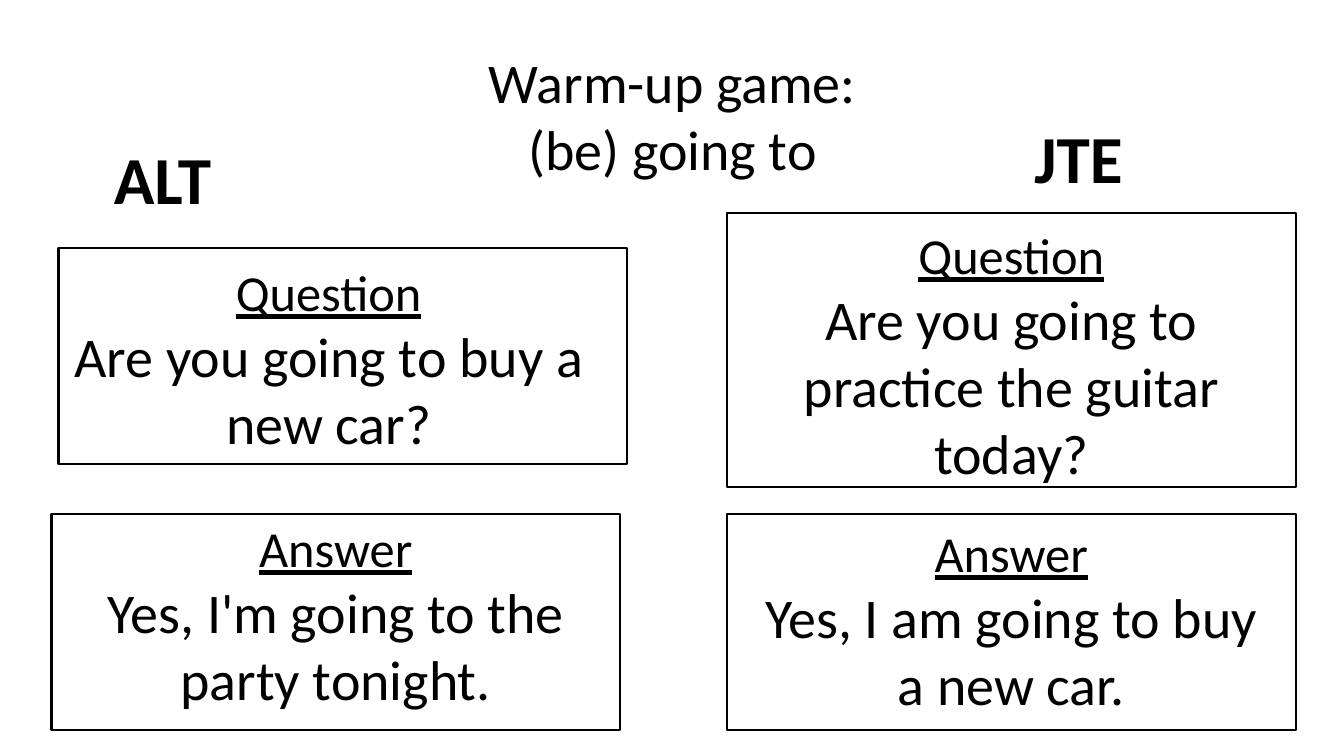
"""Build the warm-up game slide with question and answer cards for ALT and JTE."""
import pptx
import pptx.dml.color
import pptx.enum.shapes
import pptx.enum.text
import pptx.util

CARD_W, TEXT_W = 42.31, 40.21
CARD_H, TEXT_H = 28.53, 27.33
CARDS = [
    {"head": "Question", "line": "Are you going to buy a new car?",
     "frame": (4.35, 32.8, CARD_W, CARD_H), "text": (4.35, 33.87, TEXT_W, TEXT_H)},
    {"head": "Answer", "line": "Yes, I'm going to the party tonight.",
     "frame": (3.83, 68, CARD_W, CARD_H), "text": (4.88, 67.73, TEXT_W, TEXT_H)},
    {"head": "Question", "line": "Are you going to practice the guitar today?",
     "frame": (54.09, 28.13, CARD_W, 36.27), "text": (54.09, 28.93, CARD_W, 36.4)},
    {"head": "Answer", "line": "Yes, I am going to buy a new car.",
     "frame": (54.09, 68, CARD_W, CARD_H), "text": (55.14, 68.4, TEXT_W, TEXT_H)},
]
TITLE = {"lines": ["Warm-up game:", "(be) going to"], "at": (14.55, 5.6, 70.97, 19.33)}
SPEAKERS = [("JTE", (76.22, 14.8, 20.41, 12)), ("ALT", (7.73, 17.6, CARD_W, 12))]

BLACK = pptx.dml.color.RGBColor(0, 0, 0)
CENTER = {"alignment": pptx.enum.text.PP_ALIGN.CENTER}
LABEL = {"alignment": pptx.enum.text.PP_ALIGN.LEFT, "line_spacing": 0.9,
         "space_before": pptx.util.Pt(10)}
BOTTOM = pptx.enum.text.MSO_ANCHOR.BOTTOM
TOP = pptx.enum.text.MSO_ANCHOR.TOP
THEME = {
    "head": {"name": "Calibri", "size": pptx.util.Pt(36), "underline": True},
    "body": {"name": "Calibri", "size": pptx.util.Pt(40)},
    "speaker": {"name": "Calibri", "size": pptx.util.Pt(48), "bold": True},
    "ink": BLACK,
    "border": pptx.util.Pt(1.5),
}

prs = pptx.Presentation()
prs.slide_width = pptx.util.Inches(13.33)
prs.slide_height = pptx.util.Inches(7.5)


def place(at):
    """Turn percentages of the slide into lengths."""
    sides = (prs.slide_width, prs.slide_height) * 2
    return [int(side * share / 100) for side, share in zip(sides, at)]


def set_all(target, values):
    """Set each named attribute on the target."""
    for name, value in values.items():
        setattr(target, name, value)


def add_text(shapes, at, lines, layout, anchor=TOP):
    """Add a text box with one styled paragraph per line."""
    tf = shapes.add_textbox(*place(at)).text_frame
    set_all(tf, {"word_wrap": True, "vertical_anchor": anchor})
    for i, (text, style) in enumerate(lines):
        p = tf.add_paragraph() if i else tf.paragraphs[0]
        set_all(p, layout)
        r = p.add_run()
        r.text = text
        set_all(r.font, THEME[style])
        r.font.color.rgb = THEME["ink"]


def add_card(shapes, card):
    """Add a grouped frame with its heading and sentence."""
    group = shapes.add_group_shape()
    sp = group.shapes.add_shape(pptx.enum.shapes.MSO_SHAPE.RECTANGLE, *place(card["frame"]))
    sp.shadow.inherit = False
    sp.fill.background()
    sp.line.color.rgb = THEME["ink"]
    sp.line.width = THEME["border"]
    add_text(group.shapes, card["text"], [(card["head"], "head"), (card["line"], "body")], CENTER)


def main():
    """Build and save the slide."""
    s = prs.slides.add_slide(prs.slide_layouts[6])
    for card in CARDS:
        add_card(s.shapes, card)
    add_text(s.shapes, TITLE["at"], [(line, "body") for line in TITLE["lines"]], CENTER)
    for name, at in SPEAKERS:
        add_text(s.shapes, at, [(name, "speaker")], LABEL, BOTTOM)
    prs.save("out.pptx")


if __name__ == "__main__":
    main()
